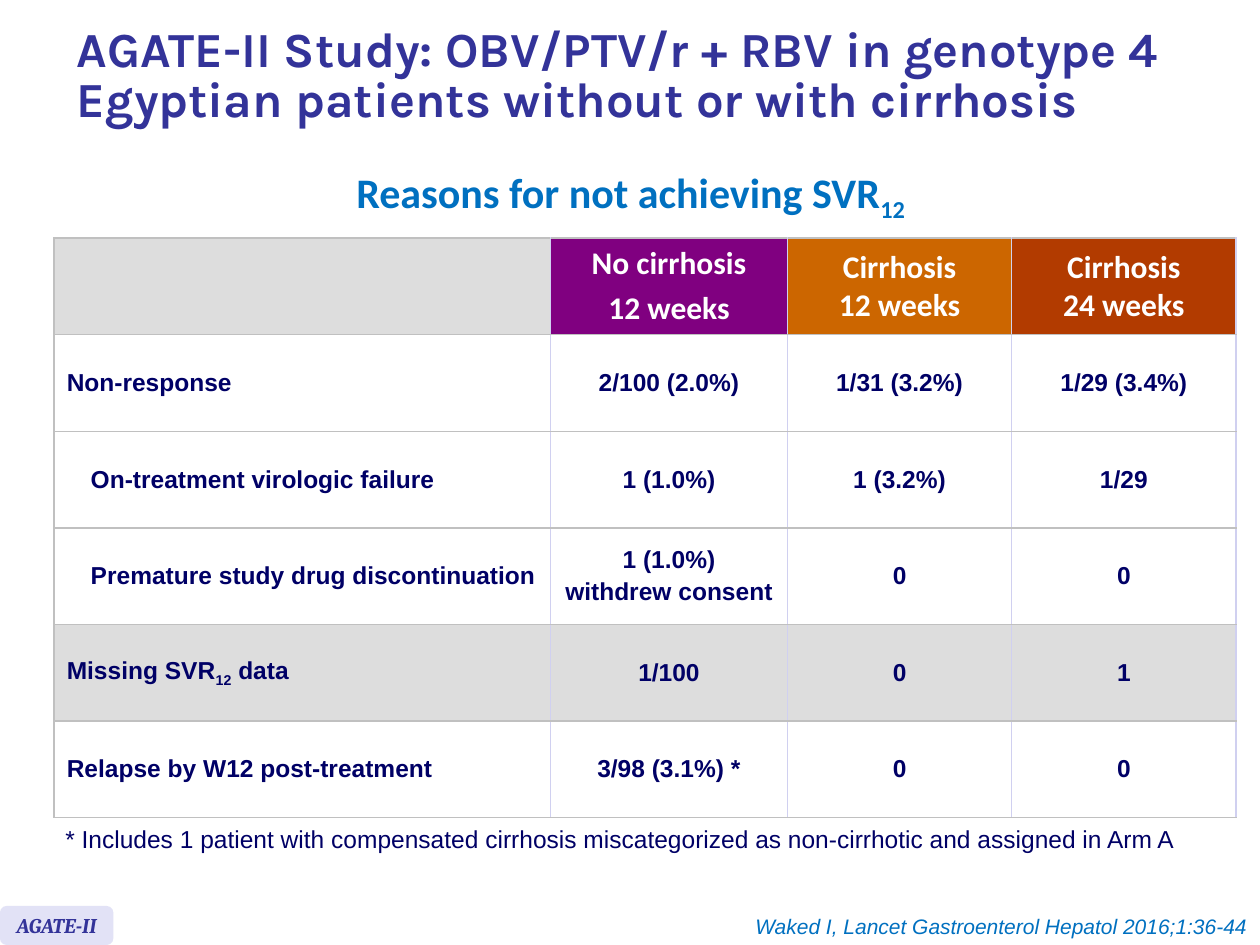
from lxml import etree
from pptx import Presentation
from pptx import util as u
from pptx.dml.color import RGBColor
from pptx.enum import shapes, text
from pptx.oxml.ns import qn

INDIGO = RGBColor(0x33, 0x33, 0x99)
BLUE = RGBColor(0x00, 0x70, 0xC0)
NAVY = RGBColor(0x00, 0x00, 0x66)
WHITE = RGBColor(0xFF, 0xFF, 0xFF)
GREY = RGBColor(0xDD, 0xDD, 0xDD)
PURPLE = RGBColor(0x80, 0x00, 0x80)
ORANGE = RGBColor(0xCC, 0x66, 0x00)
RUST = RGBColor(0xB2, 0x3B, 0x00)
LAVENDER = RGBColor(0xE2, 0xE2, 0xF6)
LINE_GREY = RGBColor(0xC0, 0xC0, 0xC0)
LINE_LILAC = RGBColor(0xD0, 0xD0, 0xF0)

LEFT, CENTER, RIGHT = (text.PP_ALIGN.LEFT, text.PP_ALIGN.CENTER,
                       text.PP_ALIGN.RIGHT)
COLUMN_WIDTHS = (3.94, 1.88, 1.78, 1.78)
HEADER_FILLS = (GREY, PURPLE, ORANGE, RUST)
ROWS = (
    ("", "No cirrhosis\n12 weeks", "Cirrhosis\v12 weeks", "Cirrhosis\v24 weeks"),
    ("Non-response", "2/100 (2.0%)", "1/31 (3.2%)", "1/29 (3.4%)"),
    ("On-treatment virologic failure", "1 (1.0%)", "1 (3.2%)", "1/29"),
    ("Premature study drug discontinuation", "1 (1.0%)\nwithdrew consent",
     "0", "0"),
    ("Missing SVR~12~ data", "1/100", "0", "1"),
    ("Relapse by W12 post-treatment", "3/98 (3.1%) *", "0", "0"),
)
INDENTED_ROWS = (2, 3)
SHADED_ROW = 4


def write(frame, content, name, size, color, align=LEFT, bold=False,
          italic=False):
    """Fill a text frame; a part between tildes becomes a subscript."""
    frame.text = content.replace("~", "")
    for index, line in enumerate(content.split("\n")):
        paragraph = frame.paragraphs[index]
        paragraph.alignment = align
        if index:
            paragraph.space_before = u.Pt(size * 0.2)
        if "~" in line:
            paragraph.clear()
            for part_index, part in enumerate(line.split("~")):
                if part:
                    run = paragraph.add_run()
                    run.text = part
                    if part_index % 2:
                        run._r.get_or_add_rPr().set("baseline", "-25000")
        for font in [paragraph.font] + [run.font for run in paragraph.runs]:
            font.name, font.size = name, u.Pt(size)
            font.bold, font.italic = bold, italic
            font.color.rgb = color


def add_text(slide, box, content, *style, wrap=False,
             anchor=text.MSO_ANCHOR.TOP, **options):
    frame = slide.shapes.add_textbox(*map(u.Inches, box)).text_frame
    frame.word_wrap = wrap
    frame.vertical_anchor = anchor
    write(frame, content, *style, **options)
    return frame


def add_title(slide, box):
    frame = add_text(
        slide, box,
        "AGATE-II Study: OBV/PTV/r + RBV in genotype 4 "
        "Egyptian patients without or with cirrhosis",
        "Karla", 28, INDIGO, bold=True, wrap=True,
        anchor=text.MSO_ANCHOR.MIDDLE)
    frame.paragraphs[0].line_spacing = 0.85


def set_borders(cell, colors):
    """Draw 1 pt borders; they must precede the fill in the cell properties."""
    properties = cell._tc.get_or_add_tcPr()
    for position, (side, color) in enumerate(colors.items()):
        line = etree.Element(qn(f"a:{side}"), w=str(u.Pt(1)))
        fill = etree.SubElement(line, qn("a:solidFill"))
        etree.SubElement(fill, qn("a:srgbClr"), val=str(color))
        properties.insert(position, line)


def add_reasons_table(slide, box):
    table = slide.shapes.add_table(
        len(ROWS), len(COLUMN_WIDTHS), *map(u.Inches, box)).table
    table.first_row = table.horz_banding = False
    for column, width in zip(table.columns, COLUMN_WIDTHS):
        column.width = u.Inches(width)
    for row_index, row in enumerate(ROWS):
        table.rows[row_index].height = u.Inches(box[3] / len(ROWS))
        for column_index, content in enumerate(row):
            cell = table.cell(row_index, column_index)
            cell.vertical_anchor = text.MSO_ANCHOR.MIDDLE
            header = row_index == 0
            style = ("Calibri", 18, WHITE) if header else ("Arial", 14, NAVY)
            write(cell.text_frame, content, *style, bold=True,
                  align=CENTER if column_index else LEFT)
            if row_index in INDENTED_ROWS and column_index == 0:
                properties = cell.text_frame.paragraphs[0]._p.get_or_add_pPr()
                properties.set("marL", str(u.Inches(0.19)))
                properties.set("indent", "0")
            cell.fill.solid()
            if header:
                cell.fill.fore_color.rgb = HEADER_FILLS[column_index]
            else:
                shaded = row_index == SHADED_ROW
                cell.fill.fore_color.rgb = GREY if shaded else WHITE
            set_borders(cell, {
                "lnL": LINE_LILAC if column_index else LINE_GREY,
                "lnR": LINE_LILAC, "lnT": LINE_GREY, "lnB": LINE_GREY})


def add_study_tag(slide, box):
    tag = slide.shapes.add_shape(
        shapes.MSO_SHAPE.ROUNDED_RECTANGLE, *map(u.Inches, box))
    tag.adjustments[0] = 0.17
    tag.shadow.inherit = False
    tag.fill.solid()
    tag.fill.fore_color.rgb = LAVENDER
    tag.line.fill.background()
    tag.text_frame.word_wrap = False
    tag.text_frame.vertical_anchor = text.MSO_ANCHOR.MIDDLE
    write(tag.text_frame, "AGATE-II", "Cambria", 12, INDIGO, align=CENTER,
          bold=True, italic=True)


def main():
    presentation = Presentation()
    presentation.slide_width = u.Inches(10)
    presentation.slide_height = u.Inches(7.5)
    slide = presentation.slides.add_slide(presentation.slide_layouts[6])
    add_title(slide, (0.51, 0.08, 9.13, 1.07))
    add_reasons_table(slide, (0.43, 1.89, sum(COLUMN_WIDTHS), 4.6))
    add_text(slide, (2.69, 1.27, 4.63, 0.5),
             "Reasons for not achieving SVR~12~",
             "Calibri", 24, BLUE, align=CENTER, bold=True)
    add_text(slide, (0.42, 6.49, 9.07, 0.34),
             "* Includes 1 patient with compensated cirrhosis miscategorized "
             "as non-cirrhotic and assigned in Arm A", "Arial", 14, NAVY)
    add_study_tag(slide, (0, 7.19, 0.9, 0.31))
    add_text(slide, (5.76, 7.2, 4.24, 0.3),
             "Waked I, Lancet Gastroenterol Hepatol 2016;1:36-44",
             "Arial", 12, BLUE, align=RIGHT, italic=True)
    presentation.save("out.pptx")


if __name__ == "__main__":
    main()
